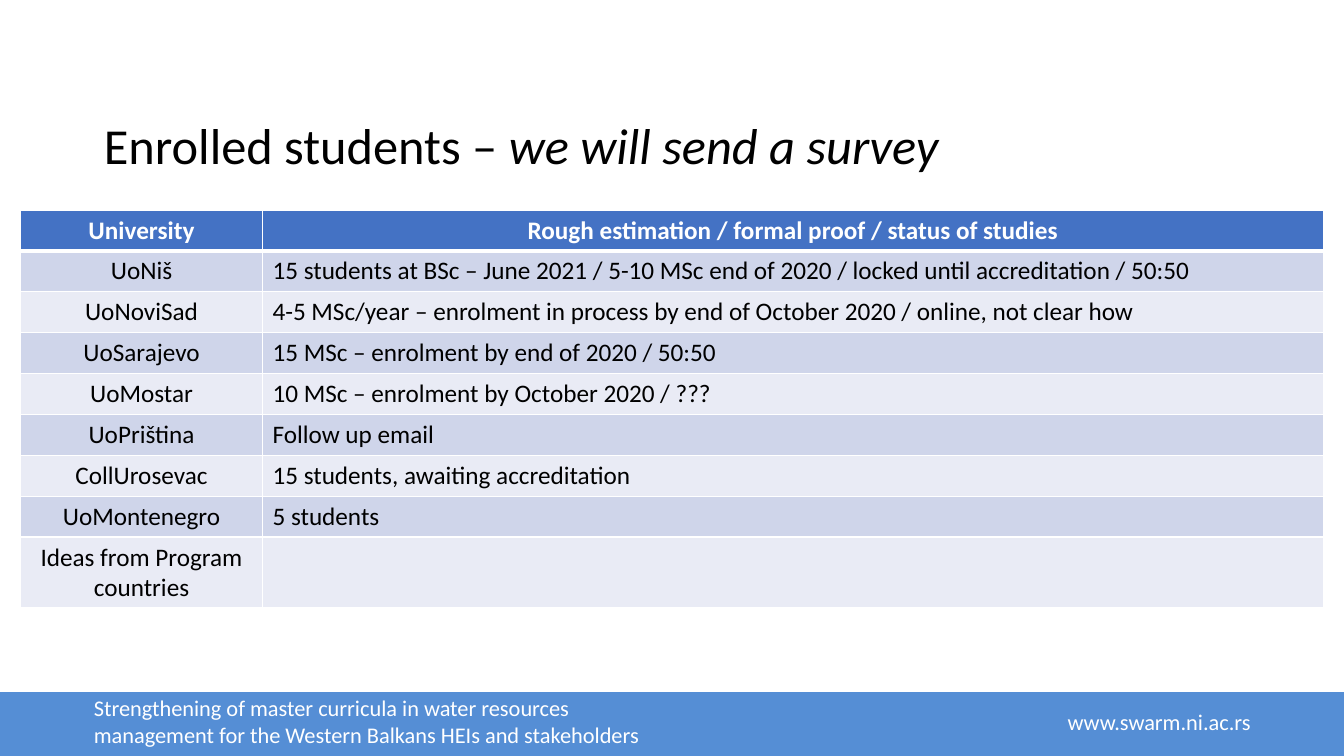
from lxml import etree
from pptx import Presentation
from pptx.dml.color import RGBColor
from pptx.enum.shapes import MSO_SHAPE
from pptx.enum.text import MSO_ANCHOR, PP_ALIGN
from pptx.oxml.ns import qn
from pptx.util import Pt

LEFT, CENTER = PP_ALIGN.LEFT, PP_ALIGN.CENTER
MIDDLE = MSO_ANCHOR.MIDDLE
PROCESS = MSO_SHAPE.FLOWCHART_PROCESS
TITLE_ONLY = 5
FONT = "Calibri"
WHITE, BLACK = "FFFFFF", "000000"
BAR, HEADER, BANDS = "558ED5", "4472C4", ("CFD5EA", "E9EBF5")
ROW_H, LAST_ROW_H = 29.2, 50.4

ROWS = [
    ("University", "Rough estimation / formal proof / status of studies"),
    ("UoNiš", "15 students at BSc – June 2021 / 5-10 MSc end of 2020 / locked until accreditation / 50:50"),
    ("UoNoviSad", "4-5 MSc/year – enrolment in process by end of October 2020 / online, not clear how"),
    ("UoSarajevo", "15 MSc – enrolment by end of 2020 / 50:50"),
    ("UoMostar", "10 MSc – enrolment by October 2020 / ???"),
    ("UoPriština", "Follow up email"),
    ("CollUrosevac", "15 students, awaiting accreditation"),
    ("UoMontenegro", "5 students"),
    ("Ideas from Program countries", ""),
]


def rgb(value):
    return RGBColor.from_string(value)


def add_run(p, text, size, color, bold=False, italic=False):
    r = p.add_run()
    r.text = text
    font = r.font
    font.name, font.size, font.bold, font.italic = FONT, Pt(size), bold, italic
    font.color.rgb = rgb(color)


def add_text_box(s, x, y, w, h, lines, wrap=True):
    tf = s.shapes.add_textbox(Pt(x), Pt(y), Pt(w), Pt(h)).text_frame
    tf.word_wrap = wrap
    p = tf.paragraphs[0]
    for i, line in enumerate(lines):
        if i:
            p.add_line_break()
        add_run(p, line, 16, WHITE)


def add_footer(s, x, y, w, h):
    bar = s.shapes.add_shape(PROCESS, Pt(x), Pt(y), Pt(w), Pt(h))
    bar.shadow.inherit = False
    bar.fill.solid()
    bar.fill.fore_color.rgb = rgb(BAR)
    bar.line.fill.background()
    add_text_box(s, x + 60, y - 1.5, 443, h, [
        "Strengthening of master curricula in water resources",
        "management for the Western Balkans HEIs and stakeholders"])
    add_text_box(s, x + 755.6, y + 8.2, 152, 27, ["www.swarm.ni.ac.rs"], wrap=False)


def add_title(s, x, y, w, h):
    title = s.shapes.title
    title.left, title.top, title.width, title.height = Pt(x), Pt(y), Pt(w), Pt(h)
    tf = title.text_frame
    tf.word_wrap = True
    tf.vertical_anchor = MIDDLE
    p = tf.paragraphs[0]
    p.alignment = LEFT
    p.line_spacing = 0.9
    add_run(p, "Enrolled students – ", 36, BLACK)
    add_run(p, "we will send a survey", 36, BLACK, italic=True)


def set_borders(cell, widths):
    """Draw white lines on a cell; widths maps side tags to points."""
    tcPr = cell._tc.get_or_add_tcPr()
    for i, (side, width) in enumerate(widths.items()):
        ln = etree.Element(qn(f"a:{side}"), w=str(Pt(width)))
        fill = etree.SubElement(ln, qn("a:solidFill"))
        etree.SubElement(fill, qn("a:srgbClr"), val=WHITE)
        tcPr.insert(i, ln)


def add_enrolment_table(s, x, y, w, first_w):
    h = ROW_H * (len(ROWS) - 1) + LAST_ROW_H
    table = s.shapes.add_table(len(ROWS), 2, Pt(x), Pt(y), Pt(w), Pt(h)).table
    table.columns[0].width, table.columns[1].width = Pt(first_w), Pt(w - first_w)
    for i, texts in enumerate(ROWS):
        is_header = i == 0
        table.rows[i].height = Pt(LAST_ROW_H if i == len(ROWS) - 1 else ROW_H)
        for j, text in enumerate(texts):
            cell = table.cell(i, j)
            cell.fill.solid()
            cell.fill.fore_color.rgb = rgb(HEADER if is_header else BANDS[(i - 1) % 2])
            set_borders(cell, {"lnL": 1, "lnR": 1, "lnT": 3 if i == 1 else 1,
                               "lnB": 3 if is_header else 1})
            p = cell.text_frame.paragraphs[0]
            p.alignment = CENTER if is_header or j == 0 else LEFT
            if text:
                add_run(p, text, 18, WHITE if is_header else BLACK, bold=is_header)


def main():
    prs = Presentation()
    prs.slide_width, prs.slide_height = Pt(960), Pt(540)
    s = prs.slides.add_slide(prs.slide_layouts[TITLE_ONLY])
    add_footer(s, 0, 494, 960, 46)
    add_title(s, 67, 64, 854, 83.5)
    add_enrolment_table(s, 14.7, 150, 930.6, 172.8)
    prs.save("out.pptx")


if __name__ == "__main__":
    main()
